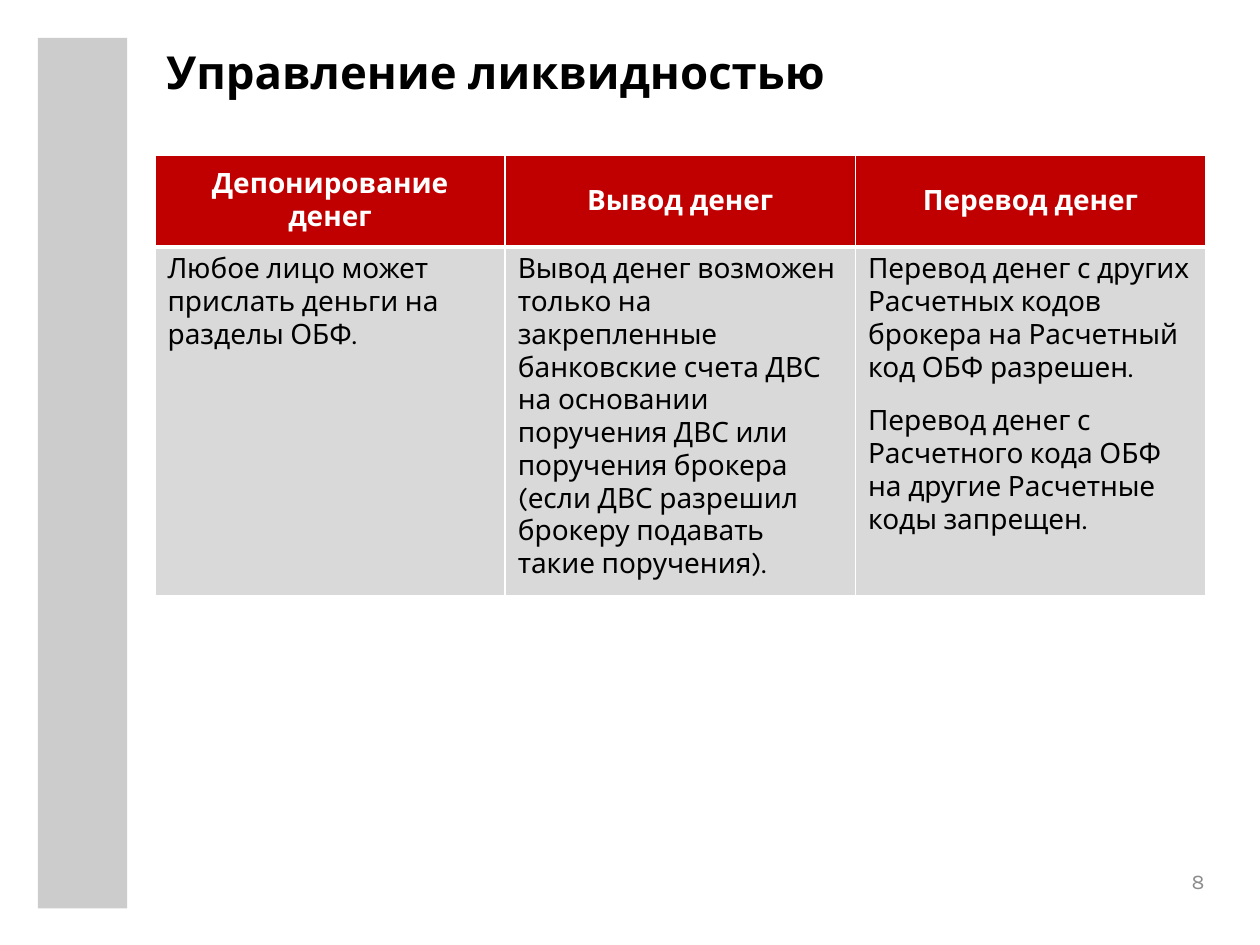
from lxml.etree import SubElement
from pptx import Presentation
from pptx.dml.color import RGBColor
from pptx.enum.shapes import MSO_SHAPE
from pptx.enum.text import MSO_ANCHOR as ANCHOR, PP_ALIGN as ALIGN
from pptx.oxml.ns import qn
from pptx.util import Inches, Pt

COLORS = {
    "white": "FFFFFF", "black": "000000", "red": "C00000",
    "side": "CCCCCC", "body": "D9D9D9", "number": "8C8C8C",
}


def write_text(frame, paragraphs, size=16, color="black", bold=False,
               align=ALIGN.LEFT, gap=12):
    frame.word_wrap = True
    for index, text in enumerate(paragraphs):
        paragraph = frame.add_paragraph() if index else frame.paragraphs[0]
        paragraph.alignment = align
        if index:
            paragraph.space_before = Pt(gap)
        run = paragraph.add_run()
        run.text = text
        run.font.name = "Karla"
        run.font.size = Pt(size)
        run.font.bold = bold
        run.font.color.rgb = RGBColor.from_string(COLORS[color])


def set_borders(cell, widths):
    properties = cell._tc.get_or_add_tcPr()
    for side in ("L", "R", "T", "B"):
        line = SubElement(properties, qn(f"a:ln{side}"), w=str(Pt(widths.get(side, 1))))
        fill = SubElement(line, qn("a:solidFill"))
        SubElement(fill, qn("a:srgbClr"), val=COLORS["white"])


presentation = Presentation()
presentation.slide_width = Inches(10)
presentation.slide_height = Inches(7.5)
slide = presentation.slides.add_slide(presentation.slide_layouts[6])

# Side bar
side_bar = slide.shapes.add_shape(
    MSO_SHAPE.RECTANGLE, Inches(0.3), Inches(0.3), Inches(0.71), Inches(6.91))
side_bar.shadow.inherit = False
side_bar.fill.solid()
side_bar.fill.fore_color.rgb = RGBColor.from_string(COLORS["side"])
side_bar.line.fill.background()

# Title
title = slide.shapes.add_textbox(Inches(1.22), Inches(0.29), Inches(8.11), Inches(0.55))
title.text_frame.vertical_anchor = ANCHOR.MIDDLE
write_text(title.text_frame, ["Управление ликвидностью"], size=26, bold=True)

# Table: one heading and its paragraphs per column
columns = [
    ("Депонирование денег", ["Любое лицо может прислать деньги на разделы ОБФ."]),
    ("Вывод денег", [
        "Вывод денег возможен только на закрепленные банковские счета ДВС на основании "
        "поручения ДВС или поручения брокера (если ДВС разрешил брокеру подавать такие "
        "поручения)."]),
    ("Перевод денег", [
        "Перевод денег с других Расчетных кодов брокера на Расчетный код ОБФ разрешен.",
        "Перевод денег с Расчетного кода ОБФ на другие Расчетные коды запрещен."]),
]
table = slide.shapes.add_table(
    2, len(columns), Inches(1.23), Inches(1.23), Inches(8.34), Inches(3.31)).table
table.rows[0].height = Inches(0.73)
table.rows[1].height = Inches(2.58)

for index, (heading, paragraphs) in enumerate(columns):
    table.columns[index].width = Inches(2.78)
    header_cell, body_cell = table.cell(0, index), table.cell(1, index)
    set_borders(header_cell, {"B": 3})
    set_borders(body_cell, {"T": 3})
    for cell, color in ((header_cell, "red"), (body_cell, "body")):
        cell.fill.solid()
        cell.fill.fore_color.rgb = RGBColor.from_string(COLORS[color])
    header_cell.vertical_anchor = ANCHOR.MIDDLE
    write_text(header_cell.text_frame, [heading], color="white", bold=True,
               align=ALIGN.CENTER)
    write_text(body_cell.text_frame, paragraphs)

# Slide number
number = slide.shapes.add_textbox(Inches(9.17), Inches(6.77), Inches(0.39), Inches(0.39))
number.text_frame.margin_right = number.text_frame.margin_bottom = 0
number.text_frame.vertical_anchor = ANCHOR.MIDDLE
write_text(number.text_frame, ["8"], size=12, color="number", align=ALIGN.RIGHT)

presentation.save("out.pptx")
